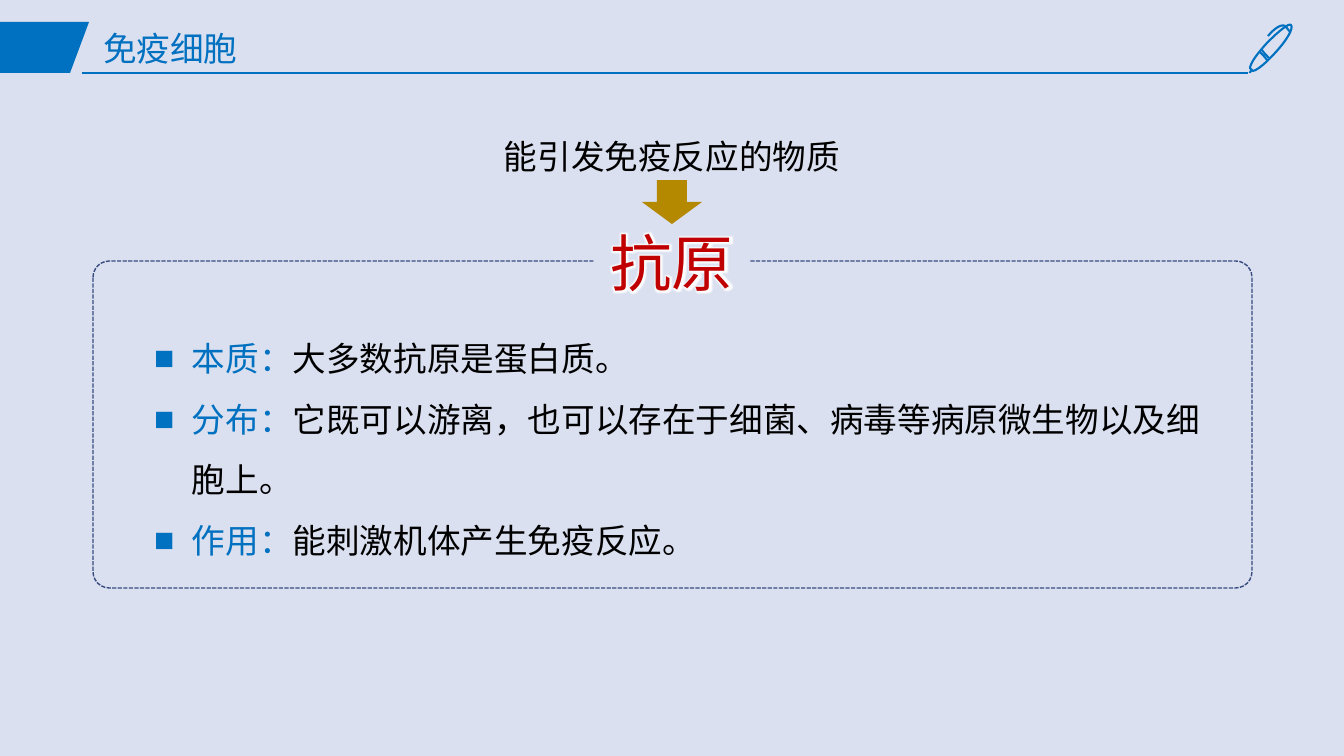
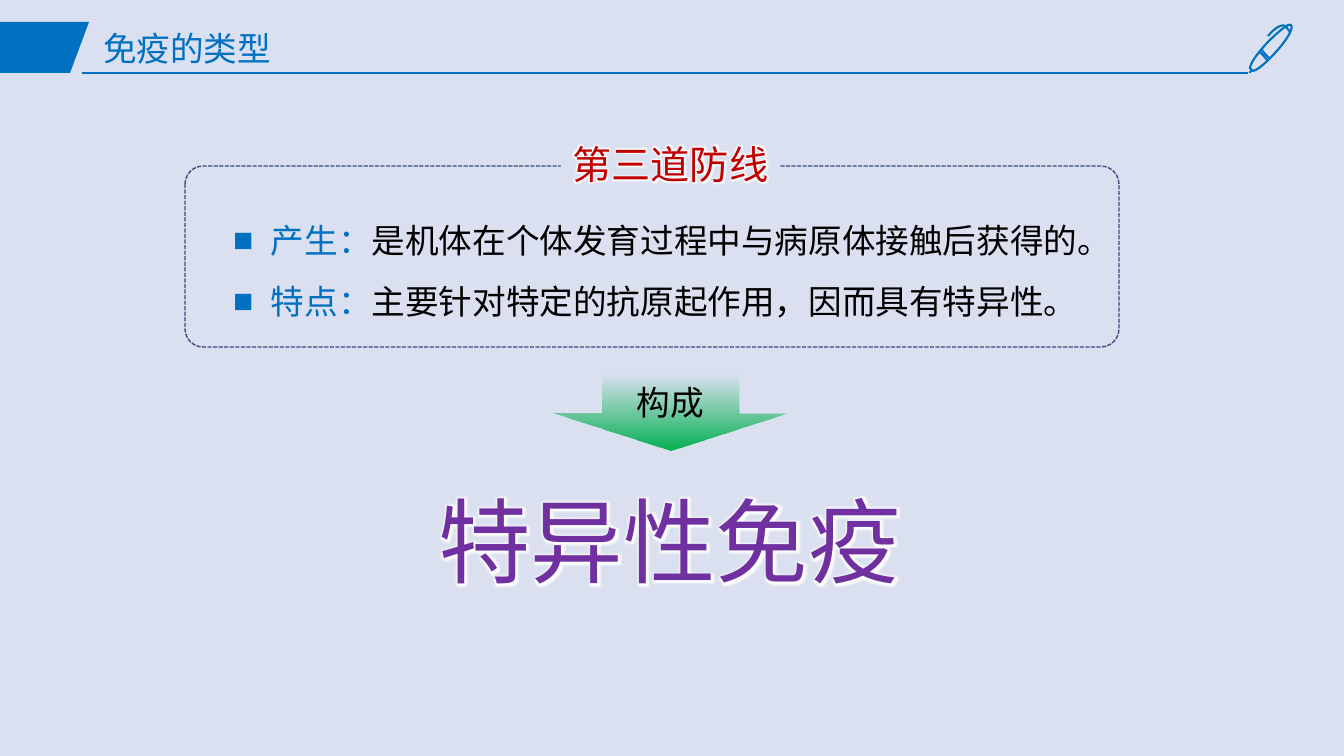
from dataclasses import dataclass
from lxml.etree import SubElement as Sub, Element
from pptx import Presentation
from pptx.dml.color import RGBColor as RGB
from pptx.enum.dml import MSO_LINE
from pptx.enum.shapes import MSO_CONNECTOR, MSO_SHAPE as Kind
from pptx.enum.text import MSO_ANCHOR as Anchor, MSO_AUTO_SIZE as Fit, PP_ALIGN as Align
from pptx.oxml.ns import qn
from pptx.util import Pt

PX = 12192000 / 1344


@dataclass(frozen=True)
class Theme:
    back: str = "DAE0EF"
    blue: str = "0070C0"
    navy: str = "374B7F"
    red: str = "C00000"
    gold: str = "B48900"
    green: str = "00B050"
    plum: str = "7030A0"
    black: str = "000000"
    white: str = "FFFFFF"
    sans: str = "Noto Sans CJK SC"
    serif: str = "Times New Roman"
    text: int = 24
    label: int = 28
    term: int = 44
    hero: int = 66


T = Theme()


def put(shape, box=None, fill=None, line=None, width=1.5):
    """Place a shape and paint it."""
    if box:
        for name, num in zip(("left", "top", "width", "height"), box):
            setattr(shape, name, round(num * PX))
    for part, color in ((shape.fill, fill), (shape.line.fill, line)):
        if color:
            part.solid()
            part.fore_color.rgb = RGB.from_string(color)
        else:
            part.background()
    if line:
        shape.line.width = Pt(width)
    shape.shadow.inherit = False
    return shape


def write(shape, rows, size=T.text, face=T.sans, space=1.0, align=Align.CENTER,
          bullet=False, glow=False, **form):
    """Fill a shape with rows of (text, colour) runs."""
    frame = shape.text_frame
    form = {"word_wrap": True, "auto_size": Fit.SHAPE_TO_FIT_TEXT,
            "vertical_anchor": Anchor.TOP} | form
    for name, value in form.items():
        setattr(frame, name, value)
    for i, row in enumerate(rows):
        para = frame.add_paragraph() if i else frame.paragraphs[0]
        for name, value in {"alignment": align, "line_spacing": space,
                            "space_before": Pt(0)}.items():
            setattr(para, name, value)
        if bullet:
            props = para._p.get_or_add_pPr()
            props.set("marL", "342900")
            props.set("indent", "-342900")
            Sub(props, qn("a:buFont"), typeface=T.serif)
            Sub(props, qn("a:buChar"), char="■")
        for text, color in row:
            run = para.add_run()
            run.text = text
            run.font.color.rgb = RGB.from_string(color)
            for name, value in {"size": Pt(size), "name": face, "bold": False}.items():
                setattr(run.font, name, value)
            props = run._r.get_or_add_rPr()
            props.find(qn("a:latin")).addnext(Element(qn("a:ea"), typeface=T.sans))
            if glow:
                halo = Element(qn("a:effectLst"))
                rim = Sub(halo, qn("a:glow"), rad="63500")
                Sub(rim, qn("a:srgbClr"), val=T.white)
                props.find(qn("a:solidFill")).addnext(halo)


# Pen icon: each stroke is a start point, then three points per curve
PEN = [
    [(1291, 25), (1289, 23), (1280, 30), (1267, 43), (1258, 53), (1251, 62), (1250, 68),
     (1251, 69), (1252, 70), (1253, 71), (1258, 70), (1267, 62), (1276, 52),
     (1287, 40), (1294, 28), (1291, 25)],
    [(1267, 60), (1265, 57), (1262, 54), (1260, 52)],
    [(1262, 50), (1264, 53), (1267, 56), (1269, 58)],
    [(1252, 70), (1251, 71), (1250, 72), (1250, 73)],
    [(1290, 32), (1290, 32), (1288, 29), (1285, 26), (1285, 26), (1280, 22), (1268, 36)],
]
STEPS = 8
strokes = []
for knots in PEN:
    dots = [knots[0]]
    for i in range(0, len(knots) - 1, 3):
        for t in (n / STEPS for n in range(1, STEPS + 1)):
            mix = ((1 - t) ** 3, 3 * t * (1 - t) ** 2, 3 * t * t * (1 - t), t ** 3)
            dots.append(tuple(sum(m * k[axis] for m, k in zip(mix, knots[i:i + 4]))
                              for axis in (0, 1)))
    strokes.append([(x * PX, y * PX) for x, y in dots])

# What each slide says: title, list, frame and its label
PAGES = [
    {"title": "免疫细胞", "at": (144, 313, 1086, 248),
     "rows": [("本质：", "大多数抗原是蛋白质。"),
              ("分布：", "它既可以游离，也可以存在于细菌、病毒等病原微生物以及细胞上。"),
              ("作用：", "能刺激机体产生免疫反应。")],
     "frame": (93, 261, 1159, 327), "round": 0.05,
     "label": ("抗原", (594, 220, 156, 84), T.term, True)},
    {"title": "免疫的类型", "at": (223, 195, 896, 126),
     "rows": [("产生：", "是机体在个体发育过程中与病原体接触后获得的。"),
              ("特点：", "主要针对特定的抗原起作用，因而具有特异性。")],
     "frame": (185, 166, 934, 181), "round": 0.1,
     "label": ("第三道防线", (561, 135, 219, 57), T.label, False)},
]

deck = Presentation()
deck.slide_width, deck.slide_height = round(1344 * PX), round(756 * PX)
back = deck.slide_master.background.fill
back.solid()
back.fore_color.rgb = RGB.from_string(T.back)

for page in PAGES:
    slide = deck.slides.add_slide(deck.slide_layouts[1])
    shapes = slide.shapes

    # Header band, rule and pen
    pen = shapes.build_freeform(0, round(22 * PX), scale=PX / PX)
    pen.add_line_segments([(x * PX, y * PX) for x, y in ((89, 22), (70, 73), (0, 73))])
    put(pen.convert_to_shape(), fill=T.blue)
    rule = shapes.add_connector(MSO_CONNECTOR.STRAIGHT,
                                *(round(n * PX) for n in (82, 73, 1248, 73)))
    rule.line.color.rgb = RGB.from_string(T.blue)
    rule.line.width = Pt(1.5)
    Sub(rule._element.spPr, qn("a:effectLst"))
    pen = shapes.build_freeform(*strokes[0][0])
    for i, dots in enumerate(strokes):
        if i:
            pen.move_to(*dots[0])
        pen.add_line_segments(dots[1:], close=not i)
    put(pen.convert_to_shape(), line=T.blue)

    # Title and list
    write(put(shapes.title, (93, 21, 1159, 59)), [[(page["title"], T.blue)]],
          face=T.serif, space=0.9, align=Align.LEFT,
          vertical_anchor=Anchor.MIDDLE, auto_size=Fit.NONE)
    rows = [[(head, T.blue), (body, T.black)] for head, body in page["rows"]]
    write(put(slide.placeholders[1], page["at"]), rows,
          space=1.5, align=Align.LEFT, bullet=True)

    # Dashed frame with its label
    frame = put(shapes.add_shape(Kind.ROUNDED_RECTANGLE, 0, 0, 0, 0),
                page["frame"], line=T.navy, width=1)
    frame.adjustments[0] = page["round"]
    frame.line.dash_style = MSO_LINE.SQUARE_DOT
    text, box, size, wrap = page["label"]
    label = put(shapes.add_shape(Kind.RECTANGLE, 0, 0, 0, 0), box, fill=T.back)
    write(label, [[(text, T.red)]], size, T.serif, glow=True, word_wrap=wrap)

first, last = deck.slides

# Slide 1: lead-in and arrow
lead = put(first.shapes.add_textbox(0, 0, 0, 0), (457, 111, 430, 66))
write(lead, [[("能引发免疫反应的物质", T.black)]], space=1.5)
put(first.shapes.add_shape(Kind.DOWN_ARROW, 0, 0, 0, 0), (642, 180, 60, 44), fill=T.gold)

# Slide 2: fading arrow and conclusion
arrow = put(last.shapes.add_shape(Kind.DOWN_ARROW, 0, 0, 0, 0), (553, 376, 235, 74))
arrow.adjustments[0] = 0.58
arrow.fill.gradient()
arrow.fill.gradient_angle = 90
for stop, place in zip(arrow.fill.gradient_stops, (0, 1)):
    stop.color.rgb = RGB.from_string(T.green)
    stop.position = place
clear = arrow._element.spPr.findall(".//" + qn("a:srgbClr"))[1]
Sub(clear, qn("a:alpha"), val="0")
write(arrow, [[("构成", T.black)]], vertical_anchor=Anchor.MIDDLE, auto_size=Fit.NONE)
hero = put(last.shapes.add_shape(Kind.RECTANGLE, 0, 0, 0, 0), (426, 479, 487, 122), fill=T.back)
write(hero, [[("特异性免疫", T.plum)]], T.hero, T.serif, glow=True, word_wrap=False)

deck.save("out.pptx")
